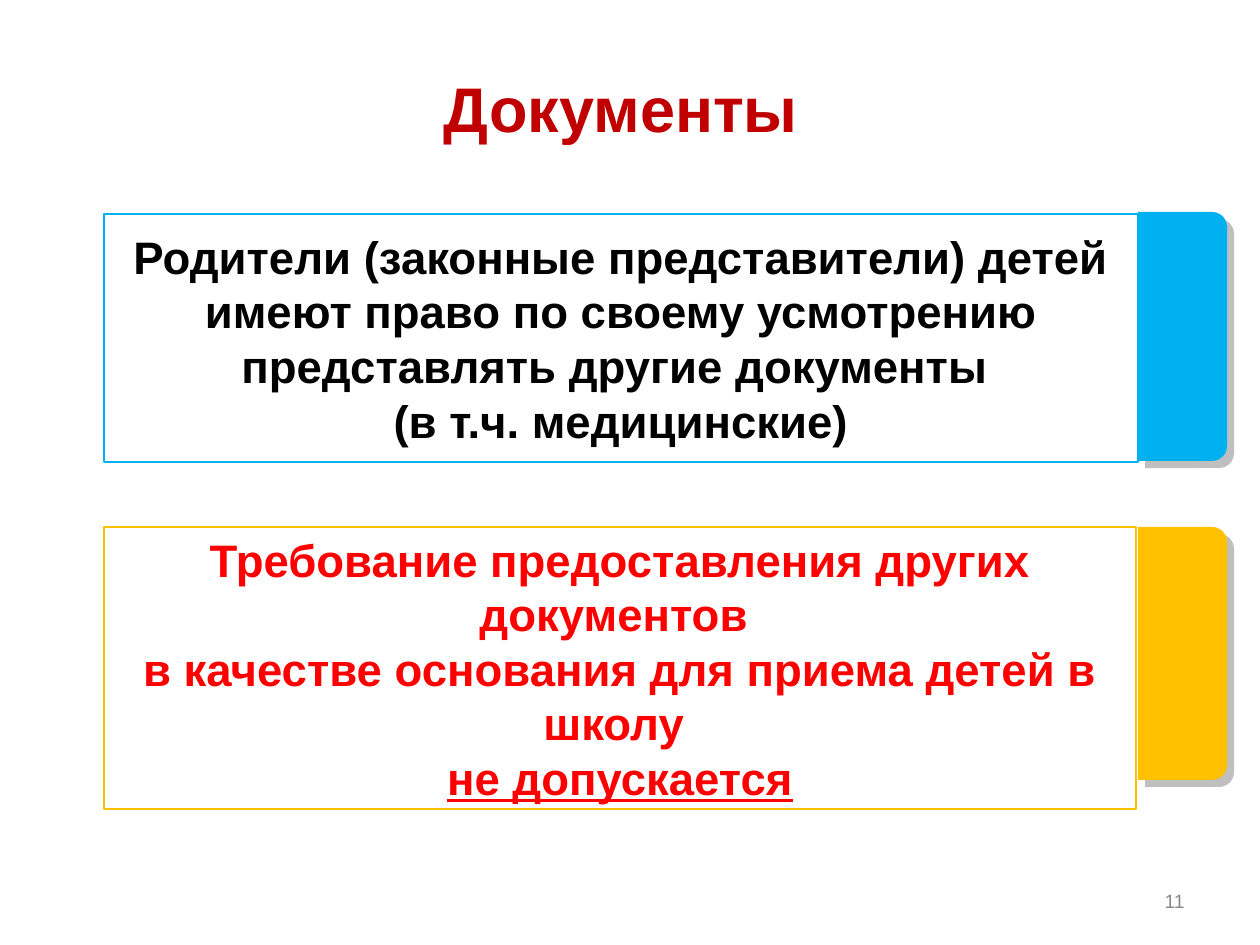
from lxml import etree
from pptx import Presentation
from pptx import util as u
from pptx.dml.color import RGBColor
from pptx.enum import shapes, text
from pptx.oxml.ns import qn

SCALE = 914400 / 126
FONT = "Arial"
BLUE, GOLD = "00B0F0", "FFC000"
ALIGN = text.PP_ALIGN


def px(n):
    return u.Emu(round(n * SCALE))


def color(code):
    return RGBColor.from_string(code)


def write(shape, lines, size, ink, bold=False, align=ALIGN.CENTER, under=()):
    """Fill a shape with one paragraph per line; under holds the underlined lines."""
    frame = shape.text_frame
    frame.word_wrap = True
    frame.vertical_anchor = text.MSO_ANCHOR.MIDDLE
    for i, line in enumerate(lines):
        para = frame.paragraphs[0] if i == 0 else frame.add_paragraph()
        para.alignment = align
        run = para.add_run()
        run.text = line
        font = run.font
        font.name, font.size, font.bold = FONT, u.Pt(size), bold
        font.color.rgb = color(ink)
        if line in under:
            font.underline = True


def label(slide, box, lines, **style):
    write(slide.shapes.add_textbox(*map(px, box)), lines, **style)


def panel(slide, box, edge, lines, **style):
    shape = slide.shapes.add_shape(shapes.MSO_SHAPE.RECTANGLE, *map(px, box))
    shape.shadow.inherit = False
    shape.fill.solid()
    shape.fill.fore_color.rgb = color("FFFFFF")
    shape.line.color.rgb = color(edge)
    shape.line.width = u.Pt(1.5)
    write(shape, lines, **style)


def cast(shape):
    """Give the shape a hard grey shadow down and to the right."""
    shape.shadow.inherit = False
    effects = shape._element.spPr.find(qn("a:effectLst"))
    shade = etree.SubElement(effects, qn("a:outerShdw"), blurRad="0",
                             dist=str(u.Pt(5.7)), dir=str(45 * 60000),
                             algn="ctr", rotWithShape="0")
    tint = etree.SubElement(shade, qn("a:srgbClr"), val="808080")
    etree.SubElement(tint, qn("a:alpha"), val="50000")


def tab(slide, box, fill):
    """Draw a tab in the box as seen, rounded on its right side."""
    left, top, wide, high = box
    shift = (high - wide) / 2
    turned = (left - shift, top + shift, high, wide)
    shape = slide.shapes.add_shape(
        shapes.MSO_SHAPE.ROUND_2_SAME_RECTANGLE, *map(px, turned))
    shape.rotation = 90
    shape.fill.solid()
    shape.fill.fore_color.rgb = color(fill)
    shape.line.fill.background()
    cast(shape)


def main():
    deck = Presentation()
    deck.slide_width, deck.slide_height = px(1260), px(945)
    slide = deck.slides.add_slide(deck.slide_layouts[6])

    label(slide, (78, 16, 1086, 183), ["Документы"],
          size=36, ink="C00000", bold=True)
    label(slide, (903, 876, 294, 50), ["11"],
          size=11, ink="898989", align=ALIGN.RIGHT)

    panel(slide, (104, 214, 1034, 248), BLUE,
          ["Родители (законные представители) детей имеют право "
           "по своему усмотрению представлять другие документы ",
           "(в т.ч. медицинские)"],
          size=26, ink="000000", bold=True)
    ban = "не допускается"
    panel(slide, (104, 527, 1032, 282), GOLD,
          ["Требование предоставления других документов ",
           "в качестве основания для приема детей в школу ", ban],
          size=26, ink="FF0000", bold=True, under=[ban])

    tab(slide, (1138, 212, 89, 249), BLUE)
    tab(slide, (1138, 527, 89, 253), GOLD)

    deck.save("out.pptx")


if __name__ == "__main__":
    main()
